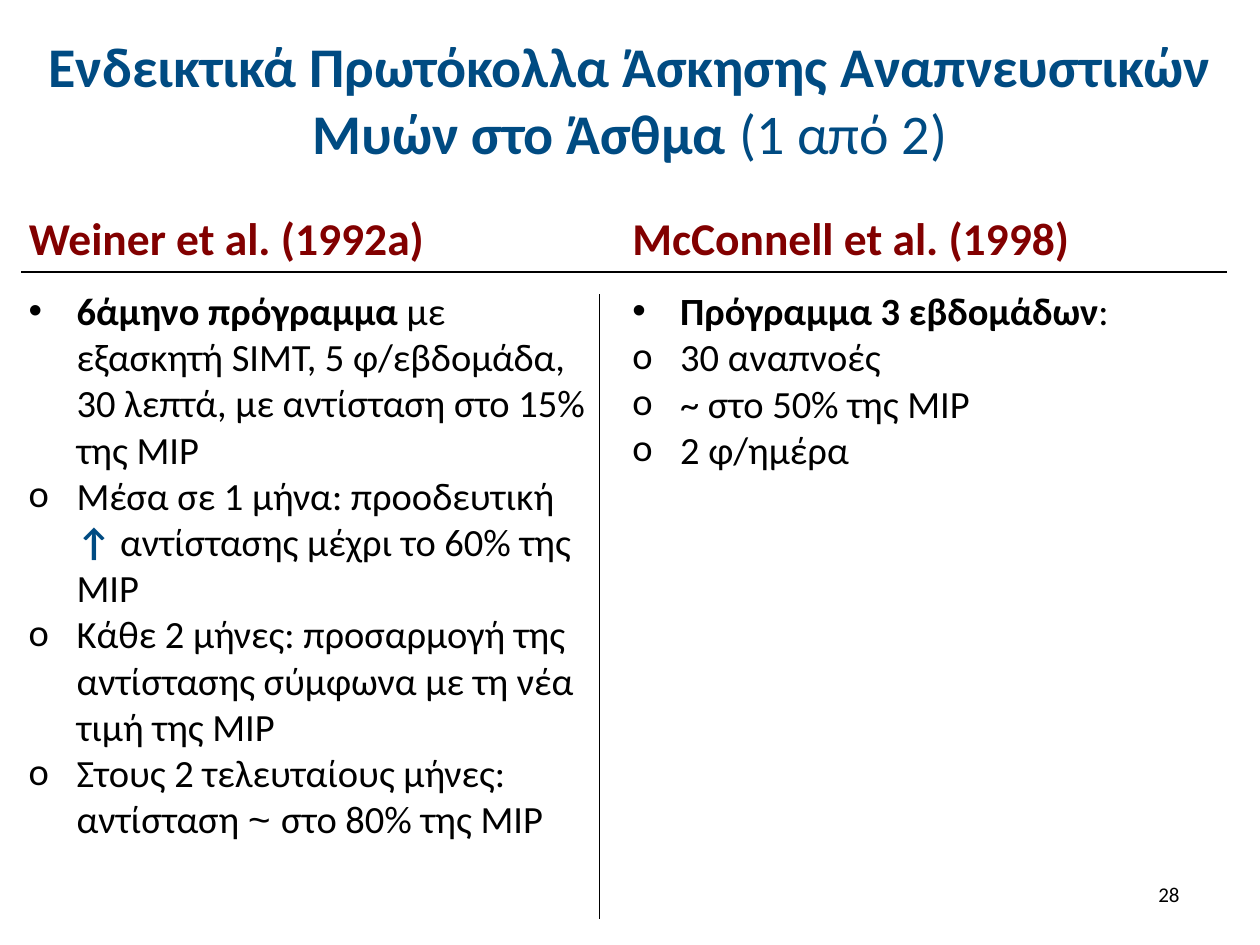
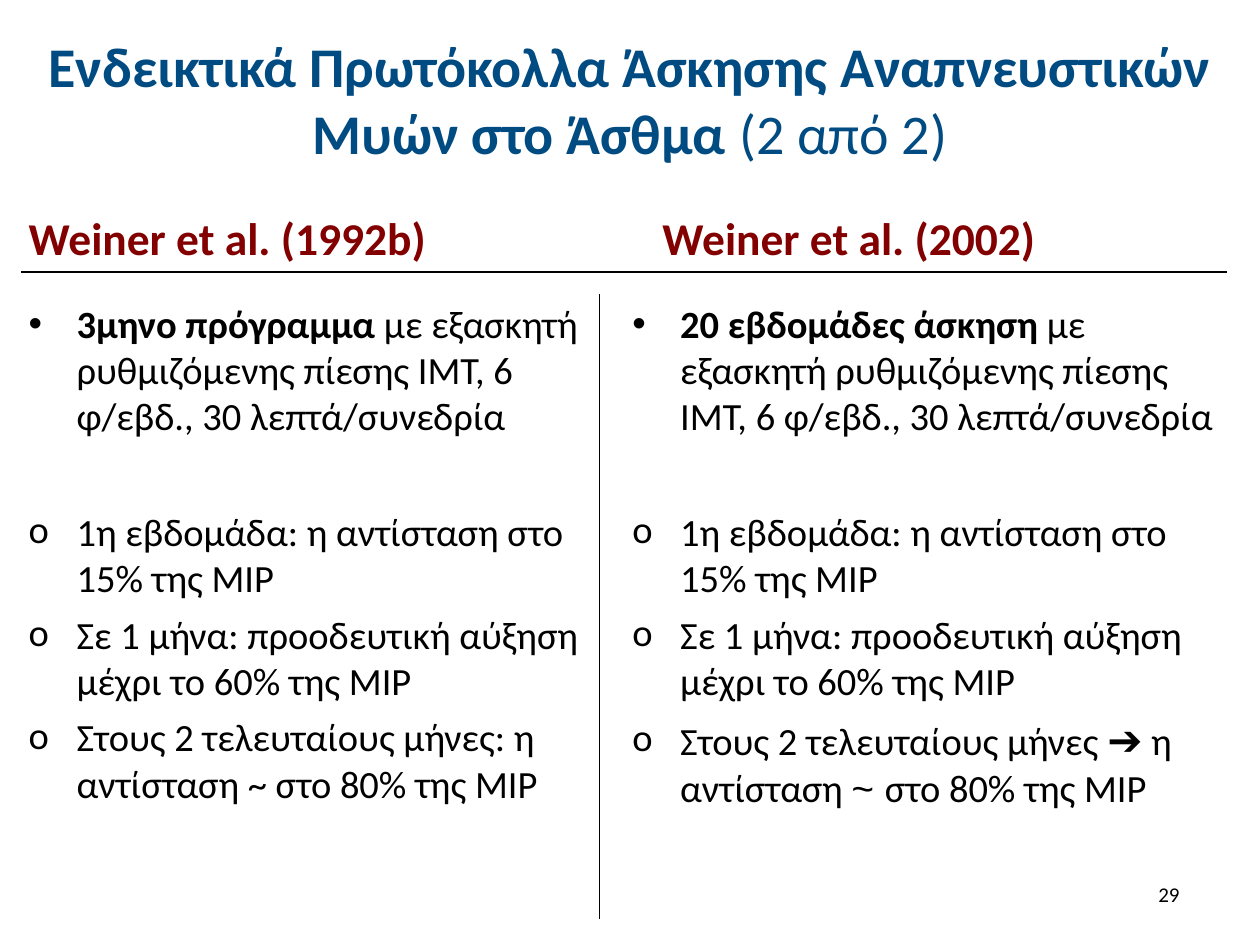
import pptx
import pptx.dml.color
import pptx.enum.shapes
import pptx.enum.text
import pptx.oxml.ns
import pptx.util
from lxml import etree

Inches = pptx.util.Inches
Pt = pptx.util.Pt
ALIGN = pptx.enum.text.PP_ALIGN
ANCHOR = pptx.enum.text.MSO_ANCHOR
FIT = pptx.enum.text.MSO_AUTO_SIZE

# Shared look
NAVY, MAROON, BLACK = "004B82", "820000", "000000"
TITLE = dict(name="Calibri", size=Pt(32), bold=True, color=NAVY)
HEADING = dict(name="Calibri", size=Pt(26), bold=True, color=MAROON)
BODY = dict(name="Calibri", size=Pt(22), bold=False, color=BLACK)
NUMBER = dict(name="Calibri", size=Pt(12), bold=False, color=BLACK)
BOLD = dict(bold=True)
UP_ARROW = dict(bold=True, color=NAVY)
ARIAL = dict(name="Arial")
RIGHT_ARROW = dict(name="Arial", size=Pt(24), bold=True)

LEFT_X, RIGHT_X = 0.13, 4.92
LEFT_WIDTH = 4.64
HANG = Inches(0.38)
BULLET_FONTS = {"•": "Arial", "o": "Calibri"}

# Wording used by more than one protocol
TITLE_TEXT = "Ενδεικτικά Πρωτόκολλα Άσκησης Αναπνευστικών Μυών στο Άσθμα "
TRAINER = "με εξασκητή ρυθμιζόμενης πίεσης IMT, 6 φ/εβδ., 30 λεπτά/συνεδρία"
FIRST_STEPS = [
    ("o", ["1η εβδομάδα: η αντίσταση στο 15% της MIP"]),
    ("o", ["Σε 1 μήνα: προοδευτική αύξηση μέχρι το 60% της MIP"]),
]


def rgb(hex_string):
    return pptx.dml.color.RGBColor.from_string(hex_string)


def add_runs(paragraph, pieces, base):
    """Each piece is plain text or (text, changes to the base format)."""
    for piece in pieces:
        text, changes = (piece, {}) if isinstance(piece, str) else piece
        run = paragraph.add_run()
        run.text = text
        for key, value in {**base, **changes}.items():
            if key == "color":
                run.font.color.rgb = rgb(value)
            else:
                setattr(run.font, key, value)


def add_box(slide, place, **frame_format):
    box = slide.shapes.add_textbox(*map(Inches, place))
    for key, value in frame_format.items():
        setattr(box.text_frame, key, value)
    return box.text_frame


def set_bullet(paragraph, mark):
    properties = paragraph._p.get_or_add_pPr()
    properties.set("marL", str(HANG))
    properties.set("indent", str(-HANG))
    for tag, key, value in (("a:buFont", "typeface", BULLET_FONTS[mark]),
                            ("a:buChar", "char", mark)):
        etree.SubElement(properties, pptx.oxml.ns.qn(tag)).set(key, value)


def add_title(slide, part):
    title = slide.shapes.title
    for key, value in dict(left=0, top=0.29, width=10, height=0.99).items():
        setattr(title, key, Inches(value))
    frame = title.text_frame
    for key, value in dict(word_wrap=True, auto_size=FIT.NONE,
                           vertical_anchor=ANCHOR.MIDDLE).items():
        setattr(frame, key, value)
    paragraph = frame.paragraphs[0]
    paragraph.alignment = ALIGN.CENTER
    add_runs(paragraph, [TITLE_TEXT, (part, dict(bold=False))], TITLE)


def add_heading(slide, x, width, text):
    frame = add_box(slide, (x, 1.62, width, 0.54), word_wrap=False,
                    auto_size=FIT.SHAPE_TO_FIT_TEXT)
    add_runs(frame.paragraphs[0], [text], HEADING)


def add_bullets(slide, place, items, gap=0):
    frame = add_box(slide, place, word_wrap=True,
                    auto_size=FIT.SHAPE_TO_FIT_TEXT)
    for index, (mark, pieces) in enumerate(items):
        paragraph = frame.add_paragraph() if index else frame.paragraphs[0]
        if index and gap:
            paragraph.space_before = Pt(gap)
        set_bullet(paragraph, mark)
        add_runs(paragraph, pieces, BODY)


def add_rule(slide, *ends):
    rule = slide.shapes.add_connector(
        pptx.enum.shapes.MSO_CONNECTOR.STRAIGHT, *map(Inches, ends))
    rule.line.color.rgb = rgb(BLACK)
    rule.line.width = Pt(0.75)
    etree.SubElement(rule._element.spPr, pptx.oxml.ns.qn("a:effectLst"))


def add_protocol_slide(deck, part, number):
    """Title, dividing rules and slide number common to both slides."""
    slide = deck.slides.add_slide(deck.slide_layouts[5])
    add_title(slide, part)
    add_rule(slide, 0.17, 2.16, 9.74, 2.16)
    add_rule(slide, 4.76, 7.29, 4.76, 2.33)
    frame = add_box(slide, (7.13, 6.9, 2.33, 0.4), word_wrap=True,
                    vertical_anchor=ANCHOR.MIDDLE)
    frame.paragraphs[0].alignment = ALIGN.RIGHT
    add_runs(frame.paragraphs[0], [number], NUMBER)
    return slide


def build_first(deck):
    slide = add_protocol_slide(deck, "(1 από 2)", "28")
    add_heading(slide, LEFT_X, 3.45, "Weiner et al. (1992a)")
    add_heading(slide, RIGHT_X, 3.79, "McConnell et al. (1998)")
    add_bullets(slide, (LEFT_X, 2.23, LEFT_WIDTH, 4.54), [
        ("•", [("6άμηνο πρόγραμμα ", BOLD),
               "με εξασκητή SIMT, 5 φ/εβδομάδα, 30 λεπτά, "
               "με αντίσταση στο 15% της MIP"]),
        ("o", ["Μέσα σε 1 μήνα: προοδευτική ", ("↑ ", UP_ARROW),
               "αντίστασης μέχρι το 60% της MIP"]),
        ("o", ["Κάθε 2 μήνες: προσαρμογή της αντίστασης "
               "σύμφωνα με τη νέα τιμή της MIP"]),
        ("o", ["Στους 2 τελευταίους μήνες: αντίσταση ", ("~ ", ARIAL),
               "στο 80% της MIP"]),
    ])
    add_bullets(slide, (RIGHT_X, 2.23, 4.82, 1.58), [
        ("•", [("Πρόγραμμα 3 εβδομάδων", BOLD), ":"]),
        ("o", ["30 αναπνοές"]),
        ("o", ["~ στο 50% της MIP"]),
        ("o", ["2 φ/ημέρα"]),
    ])


def build_second(deck):
    slide = add_protocol_slide(deck, "(2 από 2)", "29")
    add_heading(slide, LEFT_X, 3.47, "Weiner et al. (1992b)")
    add_heading(slide, 5.16, 3.27, "Weiner et al. (2002)")
    left_end = ["Στους 2 τελευταίους μήνες: η αντίσταση ~ στο 80% της MIP"]
    right_end = ["Στους 2 τελευταίους μήνες ", ("➔", RIGHT_ARROW),
                 " η αντίσταση ", ("~ ", ARIAL), "στο 80% της MIP"]
    columns = [
        (LEFT_X, LEFT_WIDTH, "3μηνο πρόγραμμα ", left_end),
        (RIGHT_X, 5.02, "20 εβδομάδες άσκηση ", right_end),
    ]
    for x, width, duration, last_step in columns:
        add_bullets(slide, (x, 2.33, width, 1.21),
                    [("•", [(duration, BOLD), TRAINER])])
        add_bullets(slide, (x, 3.98, width, 2.52),
                    FIRST_STEPS + [("o", last_step)], gap=6)


def main():
    deck = pptx.Presentation()
    deck.slide_width = Inches(10)
    deck.slide_height = Inches(7.5)
    build_first(deck)
    build_second(deck)
    deck.save("out.pptx")


if __name__ == "__main__":
    main()
